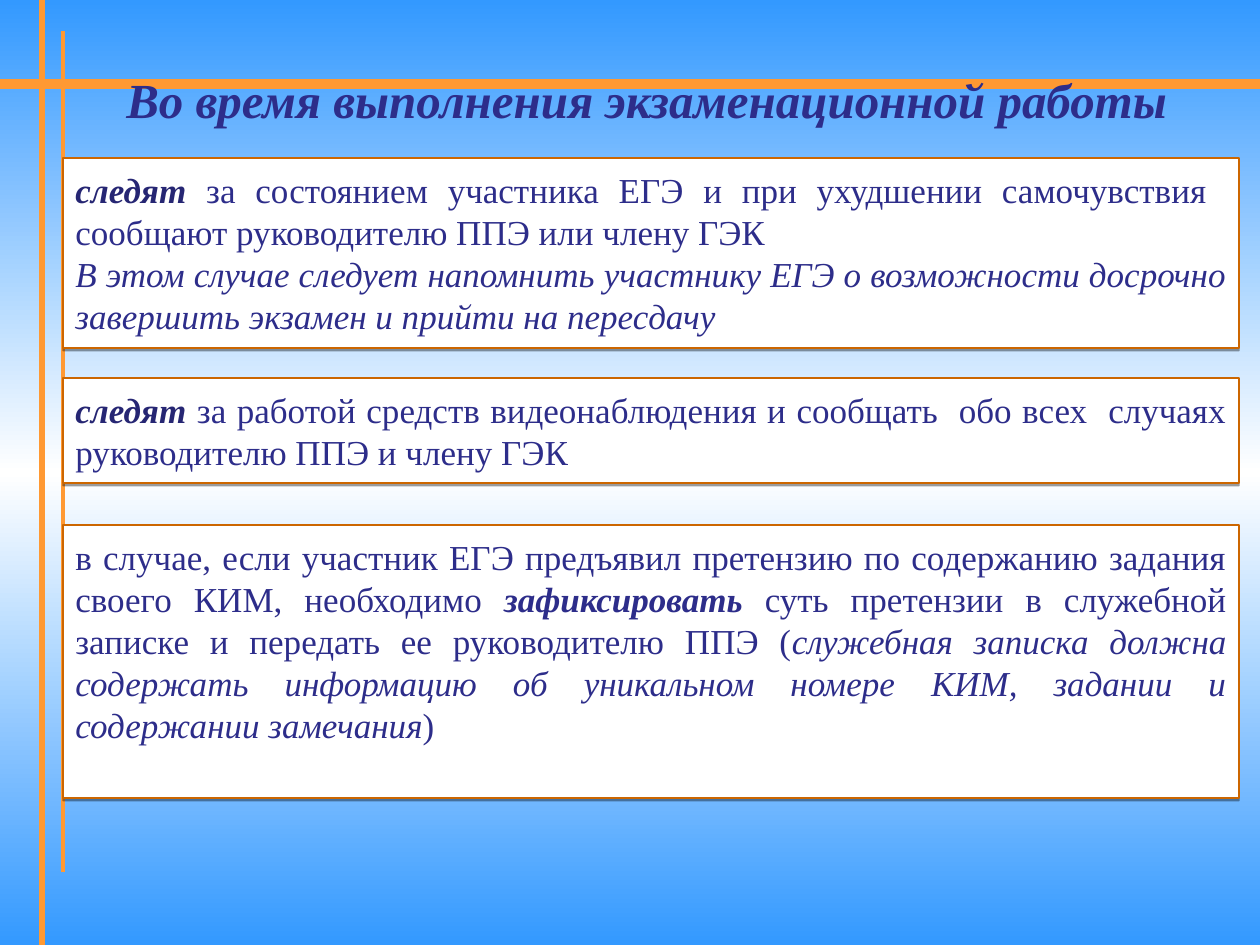
"""Builds a slide on the duties of staff while the exam is under way."""
from pptx import Presentation
from pptx.dml.color import RGBColor
from pptx.enum.shapes import MSO_CONNECTOR, MSO_SHAPE
from pptx.enum.text import MSO_ANCHOR, MSO_AUTO_SIZE, PP_ALIGN
from pptx.oxml import parse_xml
from pptx.util import Emu, Pt

RECT, LINE = MSO_SHAPE.RECTANGLE, MSO_CONNECTOR.STRAIGHT
TOP, FIXED = MSO_ANCHOR.TOP, MSO_AUTO_SIZE.NONE
CENTER, JUSTIFY = PP_ALIGN.CENTER, PP_ALIGN.JUSTIFY

FONT = "Times New Roman"
NAVY, DARK, ORANGE, RUST = "2D2D8A", "262673", "FF9933", "CC6600"
WHITE, BLUE = "FFFFFF", "3399FF"
NS = ('xmlns:a="http://schemas.openxmlformats.org/drawingml/2006/main" '
      'xmlns:p="http://schemas.openxmlformats.org/presentationml/2006/main"')
STOPS = [(0, BLUE), (50, WHITE), (100, BLUE)]

WIDE, HIGH = 1260, 945
LEFT, SPAN = 63, 1176
TITLE = "Во время выполнения экзаменационной работы"
RULES = [
    (0, 84, WIDE, 84, 6),
    (42, 0, 42, HIGH, 3),
    (63, 31, 63, 872, 2.25),
]
PLAIN, ITALIC = (NAVY, False, False), (NAVY, False, True)
STRONG, WATCH = (NAVY, True, True), (DARK, True, True)
CARDS = [
    (158, 190, [
        [("следят ", WATCH),
         ("за состоянием участника ЕГЭ и при ухудшении самочувствия  "
          "сообщают руководителю ППЭ или члену ГЭК", PLAIN)],
        [("В этом случае следует напомнить участнику ЕГЭ о возможности "
          "досрочно завершить экзамен и прийти на пересдачу", ITALIC)],
    ]),
    (378, 105, [
        [("следят ", WATCH),
         ("за работой средств видеонаблюдения и сообщать  обо всех  "
          "случаях руководителю ППЭ и члену ГЭК", PLAIN)],
    ]),
    (525, 273, [
        [("в случае, если участник ЕГЭ предъявил претензию по содержанию "
          "задания своего КИМ, необходимо ", PLAIN),
         ("зафиксировать", STRONG),
         (" суть претензии в служебной записке и передать ее "
          "руководителю ППЭ (", PLAIN),
         ("служебная записка должна содержать информацию об уникальном "
          "номере КИМ, задании и содержании замечания", ITALIC),
         (")", PLAIN)],
    ]),
]


def px(num):
    return Emu(round(num * 914400 / 126))


def color(code):
    return RGBColor.from_string(code)


def effect(shape, body=""):
    shape._element.spPr.append(
        parse_xml(f"<a:effectLst {NS}>{body}</a:effectLst>"))


def paint(slide):
    marks = "".join(f'<a:gs pos="{pos * 1000}"><a:srgbClr val="{code}"/></a:gs>'
                    for pos, code in STOPS)
    slide._element.cSld.insert(0, parse_xml(
        f'<p:bg {NS}><p:bgPr><a:gradFill rotWithShape="1">'
        f'<a:gsLst>{marks}</a:gsLst><a:lin ang="5400000" scaled="0"/>'
        '</a:gradFill><a:effectLst/></p:bgPr></p:bg>'))


def rule(slide, x1, y1, x2, y2, width):
    line = slide.shapes.add_connector(LINE, px(x1), px(y1), px(x2), px(y2))
    line.line.color.rgb = color(ORANGE)
    line.line.width = Pt(width)
    effect(line)


def card(slide, top, high, paras):
    box = slide.shapes.add_shape(RECT, px(LEFT), px(top), px(SPAN), px(high))
    box.fill.solid()
    box.fill.fore_color.rgb = color(WHITE)
    box.line.color.rgb = color(RUST)
    box.line.width = Pt(0.75)
    effect(box, '<a:outerShdw blurRad="0" dist="20320" dir="5400000" '
                'rotWithShape="0"><a:srgbClr val="000000">'
                '<a:alpha val="38000"/></a:srgbClr></a:outerShdw>')
    frame = box.text_frame
    frame.word_wrap = True
    frame.vertical_anchor = TOP
    frame.margin_left = frame.margin_right = Pt(7.2)
    frame.margin_top = frame.margin_bottom = Pt(5.76)
    for num, runs in enumerate(paras):
        para = frame.add_paragraph() if num else frame.paragraphs[0]
        para.alignment = JUSTIFY
        para.line_spacing = Pt(24)
        para.font.name, para.font.size = FONT, Pt(20)
        for text, (tint, bold, slant) in runs:
            run = para.add_run()
            run.text = text
            run.font.color.rgb = color(tint)
            run.font.bold, run.font.italic = bold, slant


def head(slide):
    title = slide.shapes.title
    title.left, title.top = px(LEFT), px(63)
    title.width, title.height = px(1167), px(63)
    frame = title.text_frame
    frame.text = TITLE
    frame.word_wrap = True
    frame.auto_size = FIXED
    frame.vertical_anchor = TOP
    para = frame.paragraphs[0]
    para.alignment = CENTER
    font = para.font
    font.name, font.size = FONT, Pt(28)
    font.bold = font.italic = True
    font.color.rgb = color(NAVY)
    slide.shapes._spTree.append(title._element)


def main():
    deck = Presentation()
    deck.slide_width, deck.slide_height = px(WIDE), px(HIGH)
    slide = deck.slides.add_slide(deck.slide_layouts[5])
    paint(slide)
    for item in RULES:
        rule(slide, *item)
    for item in CARDS:
        card(slide, *item)
    head(slide)
    deck.save("out.pptx")


if __name__ == "__main__":
    main()
